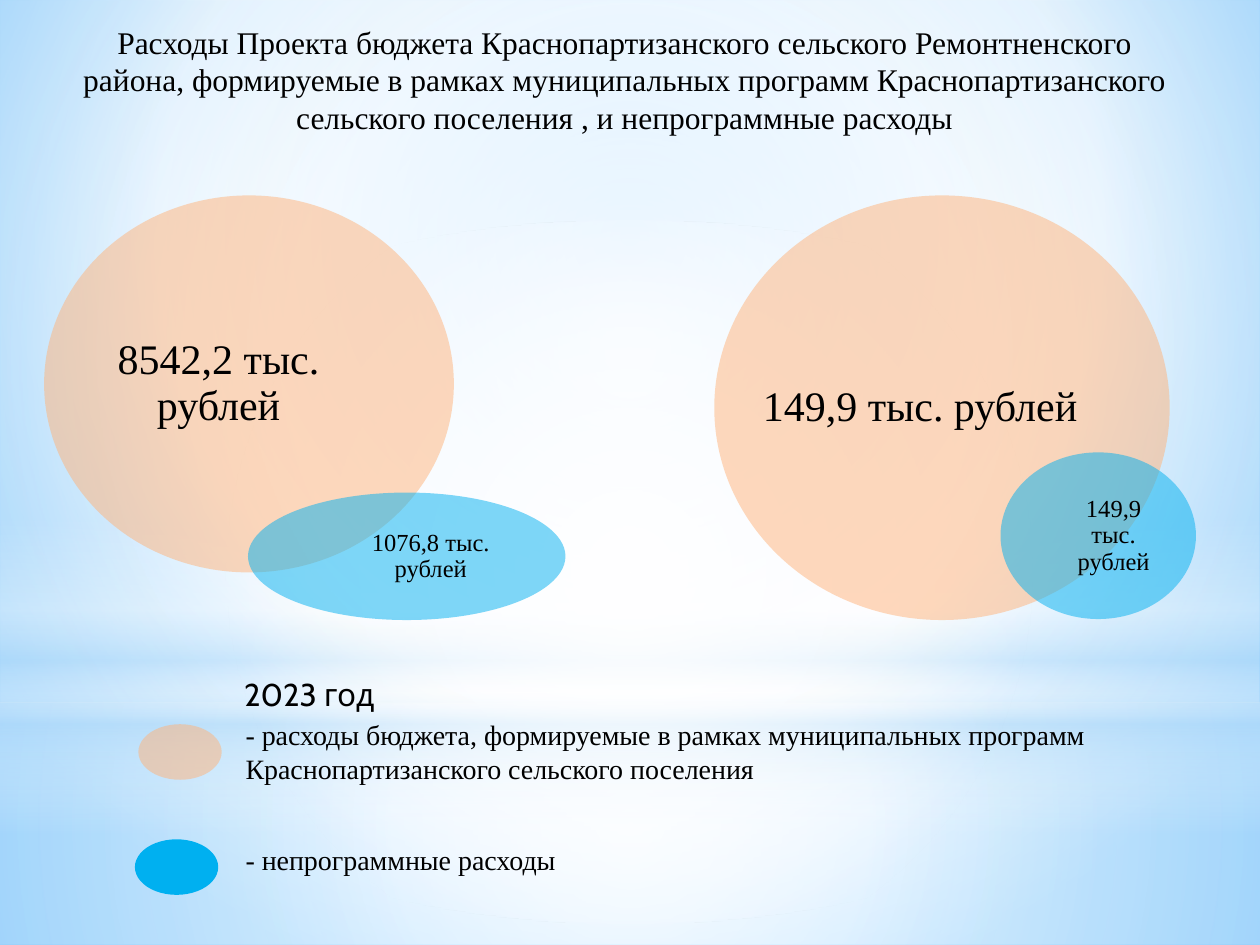
from typing import NamedTuple, Optional

from lxml import etree
from pptx import Presentation
from pptx.dml.color import RGBColor
from pptx.enum.shapes import MSO_SHAPE
from pptx.enum.text import MSO_ANCHOR, PP_ALIGN
from pptx.oxml.ns import qn
from pptx.util import Cm, Pt

PROGRAM, OTHER = "FFB37A", "00B0F0"
WHITE, PALE = "FFFFFF", "B4DCFA"
SERIF = "Times New Roman"
CENTER = (50, 50, 50, 50)


class Box(NamedTuple):
    left: float
    top: float
    width: float
    height: float

    def cm(self) -> tuple:
        return tuple(Cm(length) for length in self)


class Stop(NamedTuple):
    position: int
    color: str
    opacity: int = 100


class Glow(NamedTuple):
    geometry: MSO_SHAPE
    box: Box
    stops: list
    focus: Optional[tuple] = CENTER


class Bubble(NamedTuple):
    box: Box
    color: str
    amount: str
    label_box: Box
    size: int


class LegendEntry(NamedTuple):
    marker: Box
    color: str
    opacity: int
    caption: str
    caption_box: Box


SKY = [Stop(0, "9ED5FF"), Stop(60, WHITE), Stop(100, "5BB9FF")]
GLOWS = [
    Glow(MSO_SHAPE.RECTANGLE, Box(0, 14.17, 25.4, 4.88),
         [Stop(0, WHITE, 91), Stop(37, WHITE, 76), Stop(100, PALE, 79)]),
    Glow(MSO_SHAPE.RECTANGLE, Box(0, 0, 25.4, 14.17),
         [Stop(0, WHITE, 89), Stop(48, WHITE, 62), Stop(100, PALE, 79)]),
    Glow(MSO_SHAPE.RECTANGLE, Box(0, 10.46, 25.4, 6.35),
         [Stop(0, WHITE, 0), Stop(29, WHITE, 30), Stop(45, PALE, 40),
          Stop(55, WHITE, 26), Stop(65, PALE, 60), Stop(100, WHITE, 0)], None),
    Glow(MSO_SHAPE.OVAL, Box(0, 4.45, 25.4, 14.17),
         [Stop(0, WHITE), Stop(56, WHITE, 0)]),
]
BUBBLES = [
    Bubble(Box(14.4, 3.94, 9.18, 8.56), PROGRAM, "149,9 тыс. рублей",
           Box(15.27, 4.7, 6.56, 7.04), 24),
    Bubble(Box(20.17, 9.12, 3.94, 3.36), OTHER, "149,9 тыс. рублей",
           Box(21.41, 9.58, 2.08, 2.44), 14),
    Bubble(Box(0.89, 3.94, 8.26, 7.6), PROGRAM, "8542,2 тыс. рублей",
           Box(2.03, 4.83, 4.75, 5.82), 24),
    Bubble(Box(5, 9.93, 6.4, 2.57), OTHER, "1076,8 тыс. рублей",
           Box(6.83, 10.24, 3.71, 1.96), 14),
]
LEGEND = [
    LegendEntry(Box(2.79, 14.6, 1.68, 1.12), PROGRAM, 50,
                "- расходы бюджета, формируемые в рамках муниципальных "
                "программ Краснопартизанского сельского поселения",
                Box(4.7, 14.35, 19.6, 1.63)),
    LegendEntry(Box(2.72, 16.92, 1.68, 1.12), OTHER, 100,
                "- непрограммные расходы", Box(4.7, 16.87, 17.2, 0.94)),
]


def rgb(color: str) -> RGBColor:
    return RGBColor.from_string(color)


def add_opacity(color_element, opacity: int) -> None:
    if opacity < 100:
        etree.SubElement(color_element, qn("a:alpha"), val=str(opacity * 1000))


def fill_gradient(fill, owner, stops: list, focus: Optional[tuple]) -> None:
    """Circular gradient around focus, or a vertical one without it."""
    fill.gradient()
    gradient = next(owner.iter(qn("a:gradFill")))
    for child in list(gradient):
        gradient.remove(child)
    stop_list = etree.SubElement(gradient, qn("a:gsLst"))
    for stop in stops:
        mark = etree.SubElement(stop_list, qn("a:gs"), pos=str(stop.position * 1000))
        add_opacity(etree.SubElement(mark, qn("a:srgbClr"), val=stop.color), stop.opacity)
    if focus is None:
        etree.SubElement(gradient, qn("a:lin"), ang="5400000", scaled="0")
        return
    circle = etree.SubElement(gradient, qn("a:path"), path="circle")
    edges = {side: str(share * 1000) for side, share in zip("ltrb", focus)}
    etree.SubElement(circle, qn("a:fillToRect"), **edges)


def add_plain_shape(slide, geometry: MSO_SHAPE, box: Box):
    shape = slide.shapes.add_shape(geometry, *box.cm())
    shape.shadow.inherit = False
    shape.line.fill.background()
    return shape


def add_oval(slide, box: Box, color: str, opacity: int) -> None:
    oval = add_plain_shape(slide, MSO_SHAPE.OVAL, box)
    oval.fill.solid()
    oval.fill.fore_color.rgb = rgb(color)
    add_opacity(next(oval.element.spPr.iter(qn("a:srgbClr"))), opacity)


def add_text(slide, box: Box, text: str, size: int, font: str = SERIF,
             align: PP_ALIGN = PP_ALIGN.CENTER):
    frame = slide.shapes.add_textbox(*box.cm()).text_frame
    frame.word_wrap = True
    paragraph = frame.paragraphs[0]
    paragraph.text = text
    paragraph.alignment = align
    paragraph.font.name = font
    paragraph.font.size = Pt(size)
    paragraph.font.color.rgb = rgb("000000")
    return frame


def add_bubble(slide, bubble: Bubble) -> None:
    add_oval(slide, bubble.box, bubble.color, 50)
    label = add_text(slide, bubble.label_box, bubble.amount, bubble.size)
    label.margin_left = label.margin_right = label.margin_top = label.margin_bottom = 0
    label.vertical_anchor = MSO_ANCHOR.MIDDLE
    label.paragraphs[0].line_spacing = 0.9


def main() -> None:
    deck = Presentation()
    deck.slide_width, deck.slide_height = Cm(25.4), Cm(19.05)
    slide = deck.slides.add_slide(deck.slide_layouts[6])

    # Background with soft light
    fill_gradient(slide.background.fill, slide.element, SKY, (20, 10, 20, 60))
    for glow in GLOWS:
        shape = add_plain_shape(slide, glow.geometry, glow.box)
        fill_gradient(shape.fill, shape.element.spPr, glow.stops, glow.focus)

    # Title
    add_text(slide, Box(1.09, 0.33, 23.01, 2.57),
             "Расходы Проекта бюджета Краснопартизанского сельского Ремонтненского "
             "района, формируемые в рамках муниципальных программ Краснопартизанского "
             "сельского поселения , и непрограммные расходы", 18)

    # Spending bubbles
    for bubble in BUBBLES:
        add_bubble(slide, bubble)

    # Legend and year
    for entry in LEGEND:
        add_oval(slide, entry.marker, entry.color, entry.opacity)
        add_text(slide, entry.caption_box, entry.caption, 16, align=PP_ALIGN.LEFT)
    add_text(slide, Box(2.97, 13.49, 6.53, 1.02), "2023 год", 18, font="Cabin")

    deck.save("out.pptx")


if __name__ == "__main__":
    main()
